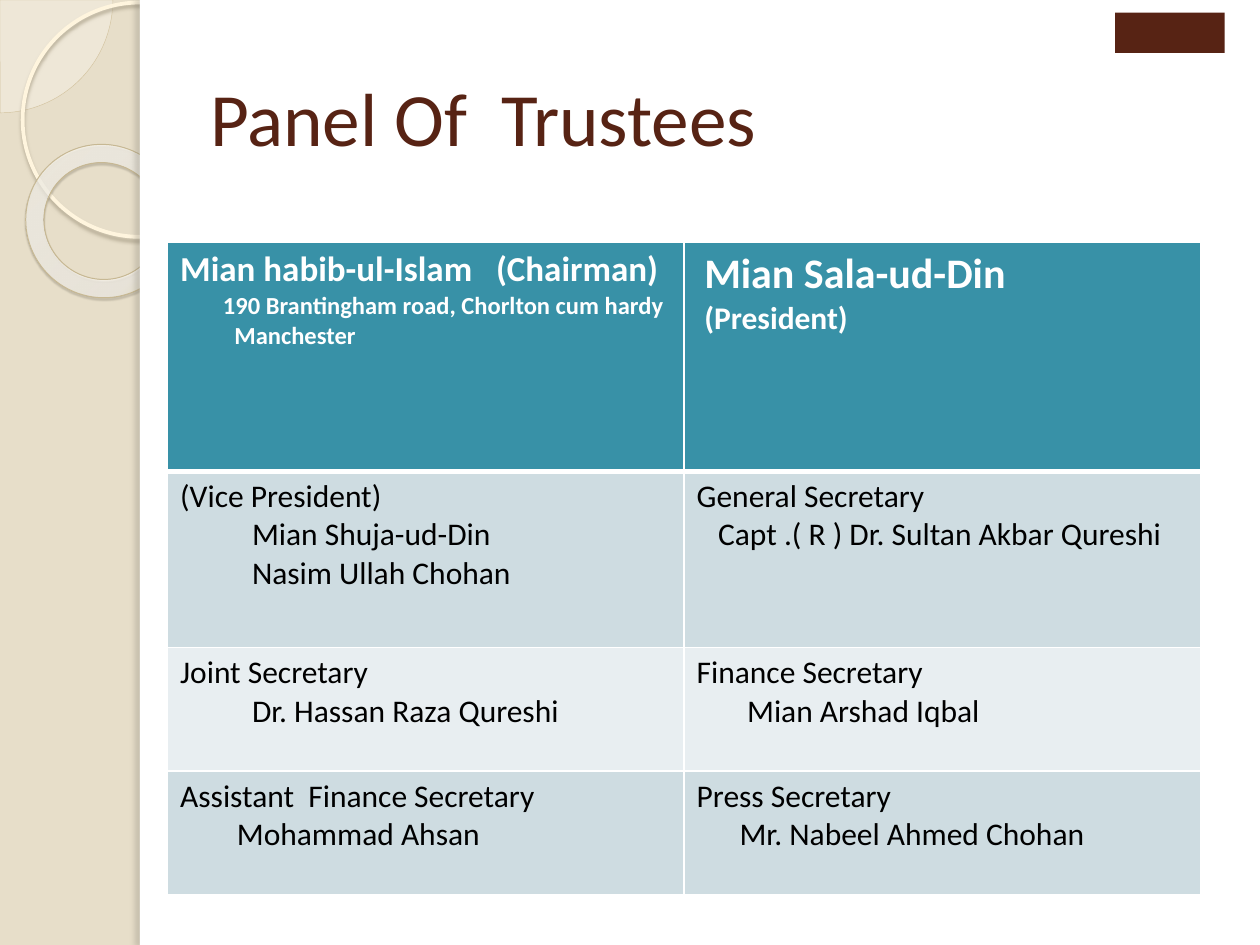
from lxml import etree
from pptx import Presentation
from pptx.dml.color import RGBColor
from pptx.enum.shapes import MSO_SHAPE
from pptx.enum.text import MSO_ANCHOR
from pptx.oxml import parse_xml
from pptx.oxml.ns import nsdecls, qn
from pptx.util import Inches, Pt

PIE, OVAL = MSO_SHAPE.PIE, MSO_SHAPE.OVAL
DONUT, RECT = MSO_SHAPE.DONUT, MSO_SHAPE.RECTANGLE
MIDDLE = MSO_ANCHOR.MIDDLE

SAND = RGBColor(0xE7, 0xDE, 0xC9)
CREAM = RGBColor(0xFE, 0xFA, 0xF4)
TAN = RGBColor(0xD3, 0xC3, 0x9F)
IVORY = RGBColor(0xFF, 0xF5, 0xDE)
KHAKI = RGBColor(0xC7, 0xB8, 0x93)
BROWN = RGBColor(0x57, 0x23, 0x14)
WHITE = RGBColor(0xFF, 0xFF, 0xFF)
BLACK = RGBColor(0, 0, 0)
TEAL = RGBColor(0x38, 0x91, 0xA7)
MIST = RGBColor(0xCE, 0xDC, 0xE1)
PALE = RGBColor(0xE8, 0xEE, 0xF1)

FONT = "Calibri"
GLOW = [(0, "FFFCF6", 70), (70, "FFFEFB", 55), (100, "F0D28E", 60)]
HEADS = [
    [("Mian habib-ul-Islam   (Chairman)", 20, 0, 0),
     ("190 Brantingham road, Chorlton cum hardy Manchester", 14, 0.43, -0.09)],
    [("Mian Sala-ud-Din", 24, 0.06, 0), ("(President)", 18, 0.06, 0)],
]
POSTS = [
    [("(Vice President)", 0.57, ["Mian Shuja-ud-Din", "Nasim Ullah Chohan"]),
     ("General Secretary", 0.17, ["Capt .( R ) Dr. Sultan Akbar Qureshi"])],
    [("Joint Secretary", 0.57, ["Dr. Hassan Raza Qureshi"]),
     ("Finance Secretary", 0.4, ["Mian Arshad Iqbal"])],
    [("Assistant  Finance Secretary", 0.45, ["Mohammad Ahsan"]),
     ("Press Secretary", 0.34, ["Mr. Nabeel Ahmed Chohan"])],
]


def add_form(slide, kind, box, fill=None, line=None, width=0):
    form = slide.shapes.add_shape(kind, *map(Inches, box))
    form.shadow.inherit = False
    if fill is None:
        form.fill.background()
    else:
        form.fill.solid()
        form.fill.fore_color.rgb = fill
    if line is None:
        form.line.fill.background()
    else:
        form.line.color.rgb = line
        form.line.width = Pt(width)
    return form


def add_shade(form, tone, alpha, blur, dist, angle):
    effect = form.element.spPr.find(qn("a:effectLst"))
    effect.append(parse_xml(
        f'<a:outerShdw {nsdecls("a")} blurRad="{Pt(blur)}" dist="{Pt(dist)}" '
        f'dir="{angle * 60000}" algn="tl" rotWithShape="0"><a:srgbClr val="{tone}">'
        f'<a:alpha val="{alpha * 1000}"/></a:srgbClr></a:outerShdw>'))


def set_glow(form):
    stops = "".join(
        f'<a:gs pos="{pos * 1000}"><a:srgbClr val="{tone}">'
        f'<a:alpha val="{alpha * 1000}"/></a:srgbClr></a:gs>'
        for pos, tone, alpha in GLOW)
    blank = form.element.spPr.find(qn("a:noFill"))
    blank.getparent().replace(blank, parse_xml(
        f'<a:gradFill {nsdecls("a")}><a:gsLst>{stops}</a:gsLst><a:path path="circle">'
        '<a:fillToRect l="-408000" t="-50000" r="508000" b="150000"/>'
        '</a:path></a:gradFill>'))


def add_side(slide, left, top, width, height):
    size = 1.79
    pie = add_form(slide, PIE, (left - size / 2, top - size / 2, size, size),
                   CREAM, TAN, 0.25)
    pie.adjustments[0] = 0
    pie.adjustments[1] = 54
    color = pie.element.spPr.find(qn("a:solidFill"))[0]
    etree.SubElement(color, qn("a:alpha"), val="33000")

    hoop = add_form(slide, OVAL, (left + 0.18, top + 0.02, 1.86, 1.86),
                    None, IVORY, 2.15)
    add_shade(hoop, "B0A68F", 85, 2, 2, 90)

    ring = add_form(slide, DONUT, (left + 0.2, top + 1.15, 1.23, 1.21),
                    None, KHAKI, 0.58)
    ring.adjustments[0] = 0.12
    ring.rotation = 38.6
    set_glow(ring)
    add_shade(ring, "5A5444", 35, 1, 1.2, 75)

    edge = left + width
    add_form(slide, RECT, (edge, top, 10 - edge, height), WHITE)
    strip = add_form(slide, RECT, (edge, top, 0.08, height), WHITE)
    add_shade(strip, "736F63", 25, 3, 3, 180)


def add_title(slide, left, top, width, height):
    box = slide.shapes.add_textbox(*map(Inches, (left, top, width, height)))
    frame = box.text_frame
    frame.word_wrap = True
    frame.vertical_anchor = MIDDLE
    para = frame.paragraphs[0]
    para.text = "Panel Of  Trustees"
    para.font.name, para.font.size = FONT, Pt(43)
    para.font.color.rgb = BROWN


def fill_cell(cell, lines, fill, color, bold):
    cell.fill.solid()
    cell.fill.fore_color.rgb = fill
    frame = cell.text_frame
    for i, (text, size, left, indent) in enumerate(lines):
        para = frame.add_paragraph() if i else frame.paragraphs[0]
        para.text = text
        font = para.font
        font.name, font.size, font.bold = FONT, Pt(size), bold
        font.color.rgb = color
        props = para._p.get_or_add_pPr()
        props.set("marL", str(Inches(left)))
        props.set("indent", str(Inches(indent)))


def set_edges(cell, row):
    props = cell._tc.get_or_add_tcPr()
    widths = {"L": 1, "R": 1, "T": 3 if row == 1 else 1, "B": 3 if row == 0 else 1}
    for i, (side, width) in enumerate(widths.items()):
        props.insert(i, parse_xml(
            f'<a:ln{side} {nsdecls("a")} w="{Pt(width)}"><a:solidFill>'
            f'<a:srgbClr val="{WHITE}"/></a:solidFill></a:ln{side}>'))


def add_panel(slide, left, top, width, height):
    table = slide.shapes.add_table(4, 2, *map(Inches, (left, top, width, height))).table
    table.first_row = table.horz_banding = False
    for row, tall in zip(table.rows, (1.82, 1.4, 0.98, 0.98)):
        row.height = Inches(tall)
    for col, lines in enumerate(HEADS):
        fill_cell(table.cell(0, col), lines, TEAL, WHITE, True)
    for row, posts in enumerate(POSTS, 1):
        for col, (post, left, names) in enumerate(posts):
            lines = [(post, 18, 0, 0)] + [(name, 18, left, 0) for name in names]
            fill_cell(table.cell(row, col), lines, MIST if row % 2 else PALE,
                      BLACK, False)
    for row in range(4):
        for col in range(2):
            set_edges(table.cell(row, col), row)


def main():
    deck = Presentation()
    deck.slide_width, deck.slide_height = Inches(10), Inches(7.5)
    slide = deck.slides.add_slide(deck.slide_layouts[6])
    back = slide.background.fill
    back.solid()
    back.fore_color.rgb = SAND
    add_side(slide, 0, 0, 1.11, 7.5)
    add_title(slide, 1.57, 0.3, 8.2, 1.25)
    add_panel(slide, 1.33, 1.92, 8.2, 5.17)
    add_form(slide, RECT, (8.85, 0.1, 0.87, 0.32), BROWN)
    deck.save("out.pptx")


if __name__ == "__main__":
    main()
